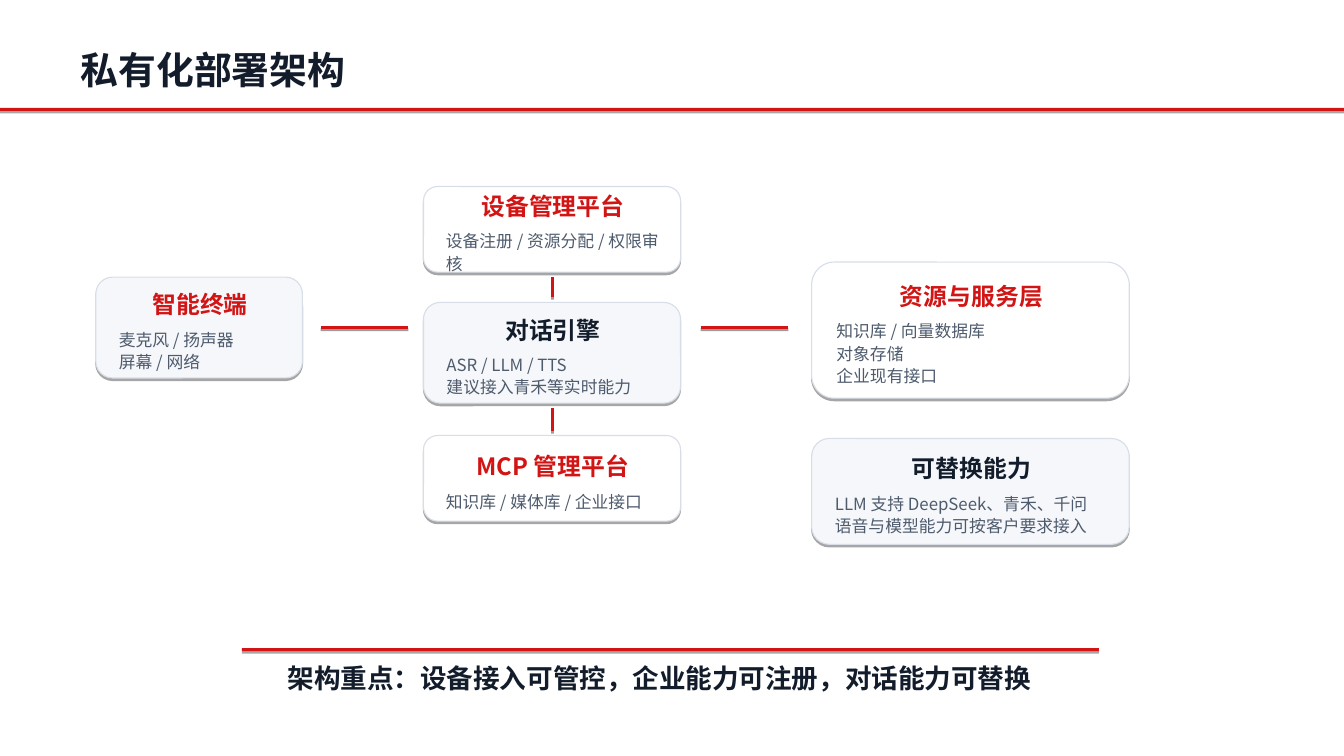
from copy import deepcopy

from lxml import etree
from pptx import Presentation
from pptx.dml.color import RGBColor
from pptx.enum.shapes import MSO_CONNECTOR, MSO_SHAPE
from pptx.enum.text import MSO_ANCHOR, MSO_AUTO_SIZE, PP_ALIGN
from pptx.oxml.ns import qn
from pptx.util import Inches, Pt

ROUNDED, RECTANGLE = MSO_SHAPE.ROUNDED_RECTANGLE, MSO_SHAPE.RECTANGLE
STRAIGHT = MSO_CONNECTOR.STRAIGHT
LEFT, CENTER = PP_ALIGN.LEFT, PP_ALIGN.CENTER
MIDDLE = MSO_ANCHOR.MIDDLE
GROW = MSO_AUTO_SIZE.SHAPE_TO_FIT_TEXT

THEME = {
    "font": "Noto Sans CJK SC",
    "red": RGBColor.from_string("D21414"),
    "ink": RGBColor.from_string("121C2B"),
    "body": RGBColor.from_string("4E5B6D"),
    "border": RGBColor.from_string("D8DEE8"),
    "white": RGBColor.from_string("FFFFFF"),
    "pale": RGBColor.from_string("F5F7FA"),
    "title_size": 27, "summary_size": 19, "heading_size": 17, "body_size": 12,
}


def write(paragraph, text, *, size, color, bold=False, align=LEFT, before=0, spacing=None):
    paragraph.text = text
    paragraph.alignment = align
    if before:
        paragraph.space_before = Pt(before)
    if spacing:
        paragraph.line_spacing = spacing
    for run in paragraph.runs:
        run.font.size, run.font.bold = Pt(size), bold
        run.font.color.rgb = color
        run.font.name = THEME["font"]
        properties = run.font._element
        etree.SubElement(properties, qn("a:ea"), typeface=THEME["font"])
    # Line breaks take the format of the text around them
    for line_break in paragraph._p.findall(qn("a:br")):
        line_break.append(deepcopy(properties))


def add_shadow(shape, *, distance, opacity):
    properties = shape._element.spPr
    for effects in properties.findall(qn("a:effectLst")):
        properties.remove(effects)
    effects = etree.SubElement(properties, qn("a:effectLst"))
    shadow = etree.SubElement(effects, qn("a:outerShdw"), blurRad="0", dist=str(Pt(distance)),
                              dir="5400000", rotWithShape="0")
    black = etree.SubElement(shadow, qn("a:srgbClr"), val="000000")
    etree.SubElement(black, qn("a:alpha"), val=str(opacity * 1000))


presentation = Presentation()
presentation.slide_width, presentation.slide_height = Inches(13.33), Inches(7.5)
slide = presentation.slides.add_slide(presentation.slide_layouts[6])
slide.background.fill.solid()
slide.background.fill.fore_color.rgb = THEME["white"]
shapes = slide.shapes

# Grid: left edge and width of each column
COLUMNS = {"terminal": (0.95, 2.05), "platform": (4.2, 2.55), "service": (8.05, 3.15)}
platform_center = 5.48
engine_middle = 3.25

# Title and summary
headlines = [
    ("私有化部署架构", (0.78, 0.44, 2.8, 0.71), "title_size", LEFT),
    ("架构重点：设备接入可管控，企业能力可注册，对话能力可替换",
     (0, 6.55, 13.08, 0.51), "summary_size", CENTER),
]
for text, place, size, align in headlines:
    frame = shapes.add_textbox(*map(Inches, place)).text_frame
    frame.margin_left = frame.margin_right = frame.margin_top = frame.margin_bottom = Inches(0.02)
    frame.word_wrap, frame.auto_size = True, GROW
    write(frame.paragraphs[0], text, size=THEME[size], color=THEME["ink"], bold=True, align=align)

# Red rules under the title and above the summary
for left, top, width in [(0, 1.07, 13.33), (2.4, 6.43, 8.5)]:
    rule = shapes.add_shape(RECTANGLE, *map(Inches, (left, top, width, 0.03)))
    rule.fill.solid()
    rule.fill.fore_color.rgb = THEME["red"]
    rule.line.fill.background()
    add_shadow(rule, distance=1.8, opacity=35)

# Cards: column, top, height, fill, heading colour, heading, body
cards = [
    ("terminal", 2.75, 1, "pale", "red", "智能终端", "麦克风 / 扬声器\n屏幕 / 网络"),
    ("platform", 1.85, 0.85, "white", "red", "设备管理平台", "设备注册 / 资源分配 / 权限审核"),
    ("platform", 3, 1, "pale", "ink", "对话引擎", "ASR / LLM / TTS\n建议接入青禾等实时能力"),
    ("platform", 4.32, 0.85, "white", "red", "MCP 管理平台", "知识库 / 媒体库 / 企业接口"),
    ("service", 2.6, 1.35, "white", "red", "资源与服务层",
     "知识库 / 向量数据库\n对象存储\n企业现有接口"),
    ("service", 4.35, 1.05, "pale", "ink", "可替换能力",
     "LLM 支持 DeepSeek、青禾、千问\n语音与模型能力可按客户要求接入"),
]
for column, top, height, fill, heading_color, heading, body in cards:
    left, width = COLUMNS[column]
    card = shapes.add_shape(ROUNDED, *map(Inches, (left, top, width, height)))
    card.fill.solid()
    card.fill.fore_color.rgb = THEME[fill]
    card.line.color.rgb = THEME["border"]
    card.line.width = Pt(0.8)
    add_shadow(card, distance=1.8, opacity=35)
    frame = card.text_frame
    frame.word_wrap, frame.vertical_anchor = True, MIDDLE
    frame.margin_left, frame.margin_right = Inches(0.18), Inches(0.16)
    frame.margin_top, frame.margin_bottom = Inches(0.12), Inches(0.05)
    write(frame.paragraphs[0], heading, size=THEME["heading_size"],
          color=THEME[heading_color], bold=True, align=CENTER)
    write(frame.add_paragraph(), body, size=THEME["body_size"], color=THEME["body"],
          before=6, spacing=1.12)

# Links between the cards, with a gap at both ends
links = [
    (3.18, engine_middle, 4.05, engine_middle),
    (6.95, engine_middle, 7.82, engine_middle),
    (platform_center, 2.75, platform_center, 2.95),
    (platform_center, 4.05, platform_center, 4.28),
]
for ends in links:
    link = shapes.add_connector(STRAIGHT, *map(Inches, ends))
    link.line.color.rgb = THEME["red"]
    link.line.width = Pt(2)
    add_shadow(link, distance=1.6, opacity=38)

presentation.save("out.pptx")
